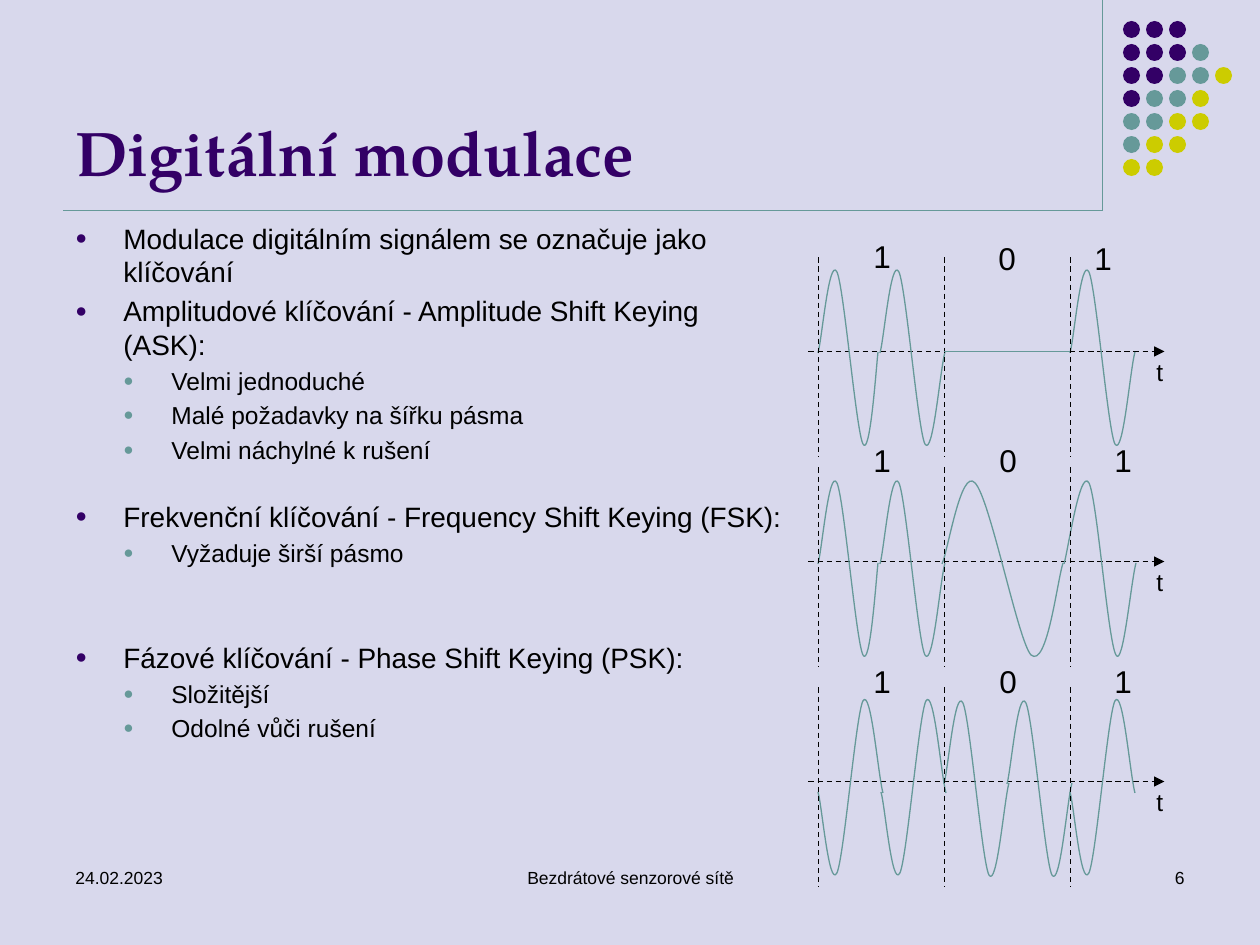
from pptx import Presentation
from pptx.dml.color import RGBColor
from pptx.enum.dml import MSO_LINE
from pptx.enum.shapes import MSO_CONNECTOR, MSO_SHAPE
from pptx.enum.text import MSO_ANCHOR, PP_ALIGN
from pptx.oxml.ns import qn
from pptx.util import Pt
from lxml.etree import SubElement

SCALE = 914400 / 126  # EMU per px
COLORS = {"bg": "D8D8EC", "purple": "330066", "teal": "669999",
          "lime": "CCCC00", "black": "000000"}
# One letter per dot; "b" is a dot in the background colour
DOT_ROWS = ["ppp", "pppt", "ppttl", "pttl", "ttllb", "tllb", "llbb", " b b"]
DOT_COLORS = {"p": "purple", "t": "teal", "l": "lime", "b": "bg"}

# Level, text, space before in points
BODY = [
    (0, "Modulace digitálním signálem se označuje jako klíčování", 3.2),
    (0, "Amplitudové klíčování - Amplitude Shift Keying (ASK):", 3.2),
    (1, "Velmi jednoduché", 2.8),
    (1, "Malé požadavky na šířku pásma", 2.8),
    (1, "Velmi náchylné k rušení", 2.8),
    (0, "Frekvenční klíčování - Frequency Shift Keying (FSK):", 20),
    (1, "Vyžaduje širší pásmo", 2.8),
    (0, "Fázové klíčování - Phase Shift Keying (PSK):", 42),
    (1, "Složitější", 2.8),
    (1, "Odolné vůči rušení", 2.8),
]

# Bezier control points of one period; y is measured from the time axis
WAVE_X = {
    "full": [0, 4, 11, 19, 26, 38, 45, 53, 60, 65],
    "short": [0, 4, 11, 19, 26, 38, 45, 52, 58, 60],
    "slow": [0, 6, 19, 33, 48, 76, 89, 105, 115, 121],
    "late": [0, 4, 16, 25, 33, 44, 52, 59, 67, 72],
}
NORMAL = [2, -11, -95, -79, -64, 79, 93, 107, 20, 1]
SHIFTED = [y + 1 for y in NORMAL]
INVERTED = [13 - y for y in NORMAL]

# Axis y, bit labels (text, x, y from axis), waves (x from first bit, kind, y)
PLOTS = [
    (351, [("1", 861, -120), ("0", 986, -118), ("1", 1082, -118)],
     [(0, "short", NORMAL), (62, "full", NORMAL), (252, "full", NORMAL)]),
    (561, [("1", 861, -126), ("0", 987, -126), ("1", 1102, -126)],
     [(0, "short", SHIFTED), (62, "full", SHIFTED),
      (124, "slow", SHIFTED), (246, "late", SHIFTED)]),
    (781, [("1", 861, -125), ("0", 987, -125), ("1", 1102, -125)],
     [(0, "full", INVERTED), (63, "full", INVERTED), (126, "full", SHIFTED),
      (189, "full", SHIFTED), (252, "full", INVERTED)]),
]


def px(value):
    return round(value * SCALE)


def rgb(name):
    return RGBColor.from_string(COLORS[name])


def add_run(p, text, size, color="black", font="Arial", bold=False):
    r = p.add_run()
    r.text = text
    r.font.size = Pt(size)
    r.font.name = font
    r.font.bold = bold
    r.font.color.rgb = rgb(color)


def add_box(s, x, y, w, h, wrap=True):
    tf = s.shapes.add_textbox(px(x), px(y), px(w), px(h)).text_frame
    tf.word_wrap = wrap
    return tf


def add_line(s, x1, y1, x2, y2, color, dashed=False, arrow=False):
    # Lines run through pixel centres so that they stay thin
    ends = [px(v + 0.5) for v in (x1, y1, x2, y2)]
    sp = s.shapes.add_connector(MSO_CONNECTOR.STRAIGHT, *ends)
    sp.line.color.rgb = rgb(color)
    sp.line.width = Pt(0.75)
    if dashed:
        sp.line.dash_style = MSO_LINE.DASH
    if arrow:
        SubElement(sp.line._get_or_add_ln(), qn("a:tailEnd"), type="triangle")
    SubElement(sp._element.spPr, qn("a:effectLst"))


def add_dots(s, x, y, pitch=23, size=17):
    for row, codes in enumerate(DOT_ROWS):
        for col, code in enumerate(codes):
            if code == " ":
                continue
            sp = s.shapes.add_shape(MSO_SHAPE.OVAL, px(x + col * pitch),
                                    px(y + row * pitch), px(size), px(size))
            sp.shadow.inherit = False
            sp.fill.solid()
            sp.fill.fore_color.rgb = rgb(DOT_COLORS[code])
            sp.line.fill.background()


def add_title(s, x, y, w, h):
    tf = add_box(s, x, y, w, h)
    tf.vertical_anchor = MSO_ANCHOR.BOTTOM
    add_run(tf.paragraphs[0], "Digitální modulace", 36, "purple",
            "TeX Gyre Pagella", True)


def add_body(s, x, y, w, h):
    tf = add_box(s, x, y, w, h)
    for i, (level, text, gap) in enumerate(BODY):
        p = tf.add_paragraph() if i else tf.paragraphs[0]
        p.level = level
        p.space_before = Pt(gap)
        add_run(p, text, (16, 14)[level])
        # Hanging bullet
        pPr = p._p.get_or_add_pPr()
        pPr.set("marL", str(px(48 * (level + 1))))
        pPr.set("indent", str(px(-48)))
        SubElement(SubElement(pPr, qn("a:buClr")), qn("a:srgbClr"),
                   val=COLORS[("purple", "teal")[level]])
        SubElement(pPr, qn("a:buSzPct"), val="70000")
        SubElement(pPr, qn("a:buFont"), typeface="Arial")
        SubElement(pPr, qn("a:buChar"), char="●")


def add_wave(s, x, y, xs, ys):
    points = [(px(x + dx), px(y + dy)) for dx, dy in zip(xs, ys)]
    fb = s.shapes.build_freeform(*points[0])
    fb.add_line_segments(points[1:], close=False)
    sp = fb.convert_to_shape()
    # Turn each three line segments into one cubic curve
    segments = list(sp._element.iter(qn("a:lnTo")))
    outline = segments[0].getparent()
    for i, segment in enumerate(segments):
        if i % 3 == 0:
            curve = SubElement(outline, qn("a:cubicBezTo"))
        curve.append(segment[0])
        outline.remove(segment)
    sp.shadow.inherit = False
    sp.fill.background()
    sp.line.color.rgb = rgb("teal")
    sp.line.width = Pt(0.75)


def add_plot(s, x, axis, labels, waves, bit=126):
    add_line(s, x - 10, axis, x + 346, axis, "black", True, True)
    for offset, kind, ys in waves:
        add_wave(s, x + offset, axis, WAVE_X[kind], ys)
    # Bit boundaries
    for i in range(3):
        add_line(s, x + i * bit, axis - 94, x + i * bit, axis + 105,
                 "black", True)
    for text, left, dy in labels:
        add_run(add_box(s, left, axis + dy, 40, 47, False).paragraphs[0],
                text, 18)
    add_run(add_box(s, x + 326, axis, 33, 42, False).paragraphs[0], "t", 14)


def add_footer(s, y, h):
    for text, x, w, align in [
            ("24.02.2023", 63, 294, PP_ALIGN.LEFT),
            ("Bezdrátové senzorové sítě", 431, 399, PP_ALIGN.CENTER),
            ("6", 903, 294, PP_ALIGN.RIGHT)]:
        p = add_box(s, x, y, w, h).paragraphs[0]
        p.alignment = align
        add_run(p, text, 10)


def main():
    prs = Presentation()
    prs.slide_width, prs.slide_height = px(1260), px(945)
    s = prs.slides.add_slide(prs.slide_layouts[6])
    s.background.fill.solid()
    s.background.fill.fore_color.rgb = rgb("bg")
    # Frame and decoration
    add_line(s, 1102, 0, 1102, 210, "teal")
    add_dots(s, 1123, 21)
    add_line(s, 63, 210, 1102, 210, "teal")
    # Text
    add_title(s, 63, 16, 1040, 179)
    add_body(s, 63, 215, 738, 607)
    # ASK, FSK and PSK plots; ASK is silent during the zero bit
    for axis, labels, waves in PLOTS:
        add_plot(s, 818, axis, labels, waves)
    add_line(s, 944, 351, 1070, 351, "teal")
    add_footer(s, 861, 63)
    prs.save("out.pptx")


if __name__ == "__main__":
    main()
